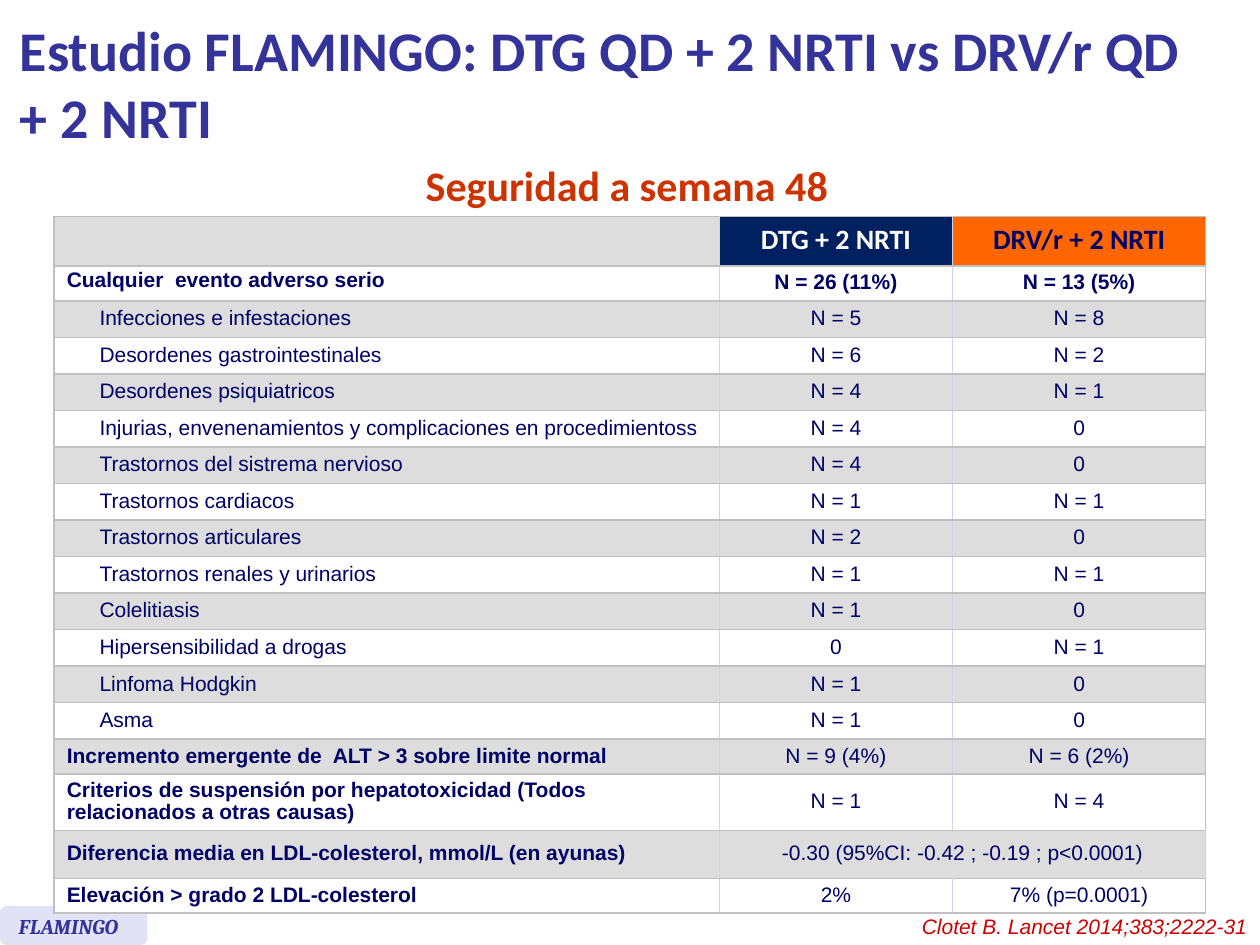
import lxml.etree
import pptx
import pptx.util
import pptx.dml.color
import pptx.enum.shapes
import pptx.enum.text
import pptx.oxml
import pptx.oxml.ns

Inches = pptx.util.Inches
Pt = pptx.util.Pt
Align = pptx.enum.text.PP_ALIGN
Anchor = pptx.enum.text.MSO_ANCHOR

NAVY, INDIGO, WHITE = "000066", "333399", "FFFFFF"
GRAY, GRID, LILAC = "DDDDDD", "C0C0C0", "D0D0F0"
COLUMN_WIDTHS = [0.26, 5.02, 1.85, 2.01]
HEADER_HEIGHT = 0.39

EVENTS = [
    ("Infecciones e infestaciones", "N = 5", "N = 8"),
    ("Desordenes gastrointestinales", "N = 6", "N = 2"),
    ("Desordenes psiquiatricos", "N = 4", "N = 1"),
    ("Injurias, envenenamientos y complicaciones en procedimientoss", "N = 4", "0"),
    ("Trastornos del sistrema nervioso", "N = 4", "0"),
    ("Trastornos cardiacos", "N = 1", "N = 1"),
    ("Trastornos articulares", "N = 2", "0"),
    ("Trastornos renales y urinarios", "N = 1", "N = 1"),
    ("Colelitiasis", "N = 1", "0"),
    ("Hipersensibilidad a drogas", "0", "N = 1"),
    ("Linfoma Hodgkin", "N = 1", "0"),
    ("Asma", "N = 1", "0"),
]
SUMMARIES = [
    ("Incremento emergente de  ALT > 3 sobre limite normal", "N = 9 (4%)", "N = 6 (2%)", 0.27),
    ("Criterios de suspensión por hepatotoxicidad (Todos relacionados a otras causas)",
     "N = 1", "N = 4", 0.45),
    ("Diferencia media en LDL-colesterol, mmol/L (en ayunas)",
     "-0.30 (95%CI: -0.42 ; -0.19 ; p<0.0001)", None, 0.38),
    ("Elevación > grado 2 LDL-colesterol", "2%", "7% (p=0.0001)", 0.27),
]


def color(value):
    return pptx.dml.color.RGBColor.from_string(value)


def write_text(frame, text, size=12, font="Arial", fill=NAVY, bold=False, italic=False,
               align=Align.LEFT, spacing=None):
    frame.word_wrap = True
    paragraph = frame.paragraphs[0]
    paragraph.text = text
    paragraph.alignment = align
    if spacing:
        paragraph.line_spacing = spacing
    for run in paragraph.runs:
        run.font.size = Pt(size)
        run.font.name = font
        run.font.bold = bold
        run.font.italic = italic
        run.font.color.rgb = color(fill)


def add_text(shapes, box, text, anchor=Anchor.TOP, **text_format):
    shape = shapes.add_textbox(*map(Inches, box))
    write_text(shape.text_frame, text, **text_format)
    shape.text_frame.vertical_anchor = anchor


def add_badge(slide, box):
    left, top, width, height = box
    group = slide.shapes.add_group_shape()
    shape = group.shapes.add_shape(
        pptx.enum.shapes.MSO_SHAPE.ROUNDED_RECTANGLE, *map(Inches, box))
    shape.shadow.inherit = False
    shape.fill.solid()
    shape.fill.fore_color.rgb = color("E2E2F6")
    shape.line.fill.background()
    add_text(group.shapes, (left + 0.05, top + 0.01, width - 0.05, height - 0.01),
             "FLAMINGO", font="Cambria", fill=INDIGO, bold=True, italic=True)


def set_borders(cell, left, right):
    properties = cell._tc.get_or_add_tcPr()
    edges = [("lnL", left), ("lnR", right), ("lnT", GRID), ("lnB", GRID)]
    for position, (tag, value) in enumerate(edges):
        paint = (f'<a:solidFill><a:srgbClr val="{value}"/></a:solidFill>'
                 if value else "<a:noFill/>")
        properties.insert(position, pptx.oxml.parse_xml(
            f'<a:{tag} {pptx.oxml.ns.nsdecls("a")} w="12700">{paint}</a:{tag}>'))


def format_cell(cell, column, fill, indented):
    cell.vertical_anchor = Anchor.MIDDLE
    cell.fill.solid()
    cell.fill.fore_color.rgb = color(fill)
    inner = None if indented else LILAC
    lefts = [GRID, inner, LILAC, LILAC]
    rights = [inner, LILAC, LILAC, GRID]
    set_borders(cell, lefts[column], rights[column])
    lxml.etree.SubElement(cell.text_frame.paragraphs[0]._p,
                          pptx.oxml.ns.qn("a:endParaRPr"), sz="1200")


def add_safety_table(slide, left, top):
    body = [("Cualquier  evento adverso serio", "N = 26 (11%)", "N = 13 (5%)", 0.28)]
    body += [(*event, 0.29) for event in EVENTS] + SUMMARIES
    heights = [HEADER_HEIGHT] + [row[3] for row in body]
    event_rows = range(2, 2 + len(EVENTS))
    table = slide.shapes.add_table(
        len(heights), len(COLUMN_WIDTHS), Inches(left), Inches(top),
        Inches(sum(COLUMN_WIDTHS)), Inches(sum(heights))).table
    table.first_row = False
    table.horz_banding = False
    for column, width in zip(table.columns, COLUMN_WIDTHS):
        column.width = Inches(width)
    for index, height in enumerate(heights):
        table.rows[index].height = Inches(height)
        for column in range(len(COLUMN_WIDTHS)):
            format_cell(table.cell(index, column), column, WHITE if index % 2 else GRAY,
                        index in event_rows)
        if index in event_rows:
            table.cell(index, 0).margin_top = table.cell(index, 0).margin_bottom = 0
        else:
            table.cell(index, 0).merge(table.cell(index, 1))

    headers = [(2, "DTG + 2 NRTI", "002060", WHITE), (3, "DRV/r + 2 NRTI", "FF6600", NAVY)]
    for column, text, fill, text_color in headers:
        cell = table.cell(0, column)
        cell.fill.fore_color.rgb = color(fill)
        write_text(cell.text_frame, text, size=16, font="Calibri", fill=text_color,
                   bold=True, align=Align.CENTER, spacing=0.8)

    for index, (label, first, second, height) in enumerate(body, 1):
        is_event = index in event_rows
        write_text(table.cell(index, 1 if is_event else 0).text_frame, label,
                   bold=not is_event, spacing=Pt(10 if index == 1 else 12.5))
        for column, value in ((2, first), (3, second)):
            if value is None:
                table.cell(index, 2).merge(table.cell(index, 3))
            else:
                write_text(table.cell(index, column).text_frame, value, bold=index == 1,
                           align=Align.CENTER, spacing=Pt(12.5))


def build_safety_slide(presentation):
    slide = presentation.slides.add_slide(presentation.slide_layouts[6])
    add_text(slide.shapes, (0.04, 1.3, 9.87, 0.51), "Seguridad a semana 48", size=24,
             font="Calibri", fill="CC3300", bold=True, align=Align.CENTER, spacing=Pt(22.8))
    add_text(slide.shapes, (7, 7.2, 3, 0.3), "Clotet B. Lancet 2014;383;2222-31",
             fill="CC0000", italic=True, align=Align.RIGHT)
    add_badge(slide, (0, 7.19, 1.17, 0.31))
    add_text(slide.shapes, (0.06, 0.05, 9.55, 1.21),
             "Estudio FLAMINGO: DTG QD + 2 NRTI vs DRV/r QD\n+ 2 NRTI", anchor=Anchor.MIDDLE,
             size=32, font="Calibri", fill=INDIGO, bold=True)
    add_safety_table(slide, 0.43, 1.72)


def main():
    presentation = pptx.Presentation()
    presentation.slide_width = Inches(10)
    presentation.slide_height = Inches(7.5)
    build_safety_slide(presentation)
    presentation.save("out.pptx")


if __name__ == "__main__":
    main()
